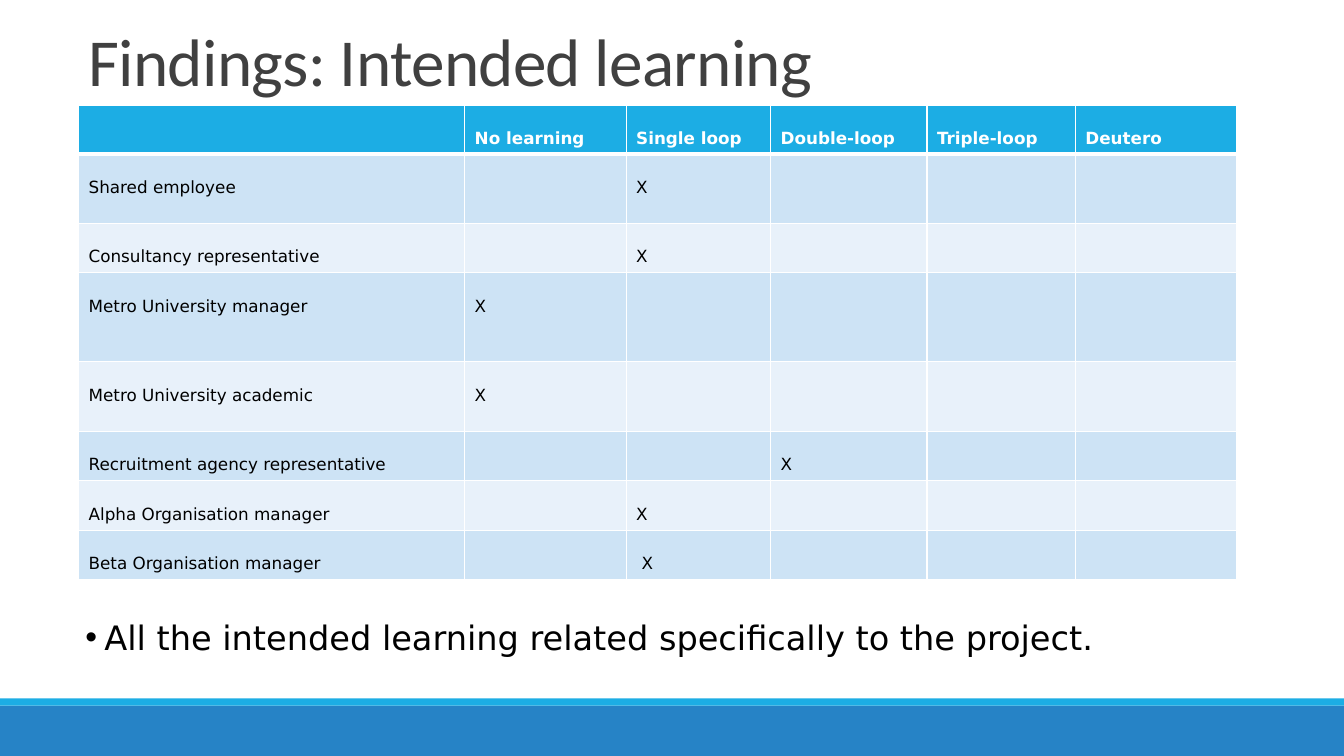
from pptx import Presentation
from pptx.dml.color import RGBColor
from pptx.enum.shapes import MSO_SHAPE as SHAPE
from pptx.enum.text import MSO_ANCHOR as ANCHOR
from pptx.oxml import parse_xml
from pptx.oxml.ns import nsdecls
from pptx.util import Cm, Pt


def rgb(value):
    return RGBColor.from_string(value)


def write(tf, text, size=12, font="DejaVu Sans", color="000000", bold=False,
          anchor=ANCHOR.TOP, line=1.0):
    tf.word_wrap = True
    tf.vertical_anchor = anchor
    p = tf.paragraphs[0]
    p.line_spacing = line
    r = p.add_run()
    r.text = text
    r.font.size = Pt(size)
    r.font.name = font
    r.font.bold = bold
    r.font.color.rgb = rgb(color)
    return p, r


prs = Presentation()
prs.slide_width, prs.slide_height = Cm(33.87), Cm(19.05)
s = prs.slides.add_slide(prs.slide_layouts[6])

for top, height, color in [(17.78, 1.27, "2683C6"), (17.6, 0.18, "1CADE4")]:
    sp = s.shapes.add_shape(SHAPE.RECTANGLE, 0, Cm(top), prs.slide_width, Cm(height))
    sp.shadow.inherit = False
    sp.fill.solid()
    sp.fill.fore_color.rgb = rgb(color)
    sp.line.fill.background()

title = s.shapes.add_textbox(Cm(1.98), Cm(-1.02), Cm(29.21), Cm(3.68))
p, r = write(title.text_frame, "Findings: Intended learning", size=48, font="Calibri",
             color="404040", anchor=ANCHOR.BOTTOM, line=0.85)
r.font._element.set("spc", "-50")

headers = ["", "No learning", "Single loop", "Double-loop", "Triple-loop", "Deutero"]
findings = [
    ("Shared employee", "Single loop", "X"),
    ("Consultancy representative", "Single loop", "X"),
    ("Metro University manager", "No learning", "X"),
    ("Metro University academic", "No learning", "X"),
    ("Recruitment agency representative", "Double-loop", "X"),
    ("Alpha Organisation manager", "Single loop", "X"),
    ("Beta Organisation manager", "Single loop", " X"),
]
rows = [headers] + [[who] + [mark if h == level else "" for h in headers[1:]]
                    for who, level, mark in findings]
widths = [9.73, 4.07, 3.64, 3.94, 3.74, 4.07]
heights = [1.23, 1.74, 1.25, 2.24, 1.75, 1.25, 1.25, 1.25]

table = s.shapes.add_table(len(rows), len(headers), Cm(1.98), Cm(2.65),
                           Cm(sum(widths)), Cm(sum(heights))).table
for column, width in zip(table.columns, widths):
    column.width = Cm(width)
for i, (row, height) in enumerate(zip(rows, heights)):
    table.rows[i].height = Cm(height)
    fill = "1CADE4" if i == 0 else "CDE3F5" if i % 2 else "E8F1FA"
    edges = {"lnL": 1, "lnR": 1, "lnT": 3 if i == 1 else 1, "lnB": 3 if i == 0 else 1}
    for j, text in enumerate(row):
        cell = table.cell(i, j)
        tc_pr = cell._tc.get_or_add_tcPr()
        for edge, points in edges.items():
            tc_pr.append(parse_xml(
                f'<a:{edge} {nsdecls("a")} w="{Pt(points)}"><a:solidFill>'
                f'<a:srgbClr val="FFFFFF"/></a:solidFill></a:{edge}>'))
        cell.fill.solid()
        cell.fill.fore_color.rgb = rgb(fill)
        if text:
            cell.margin_top = Cm(0.6)
            write(cell.text_frame, text, color="000000" if i else "FFFFFF", bold=i == 0)
        else:
            cell.text_frame.paragraphs[0].font.size = Pt(12)

note = s.shapes.add_textbox(Cm(1.9), Cm(15.42), Cm(29.18), Cm(1.27))
p, r = write(note.text_frame,
             "All the intended learning related specifically to the project.", size=24)
p_pr = p._p.get_or_add_pPr()
p_pr.set("marL", str(Cm(0.48)))
p_pr.set("indent", str(Cm(-0.48)))
p_pr.append(parse_xml(f'<a:buFont {nsdecls("a")} typeface="Arial"/>'))
p_pr.append(parse_xml(f'<a:buChar {nsdecls("a")} char="•"/>'))

prs.save("out.pptx")
